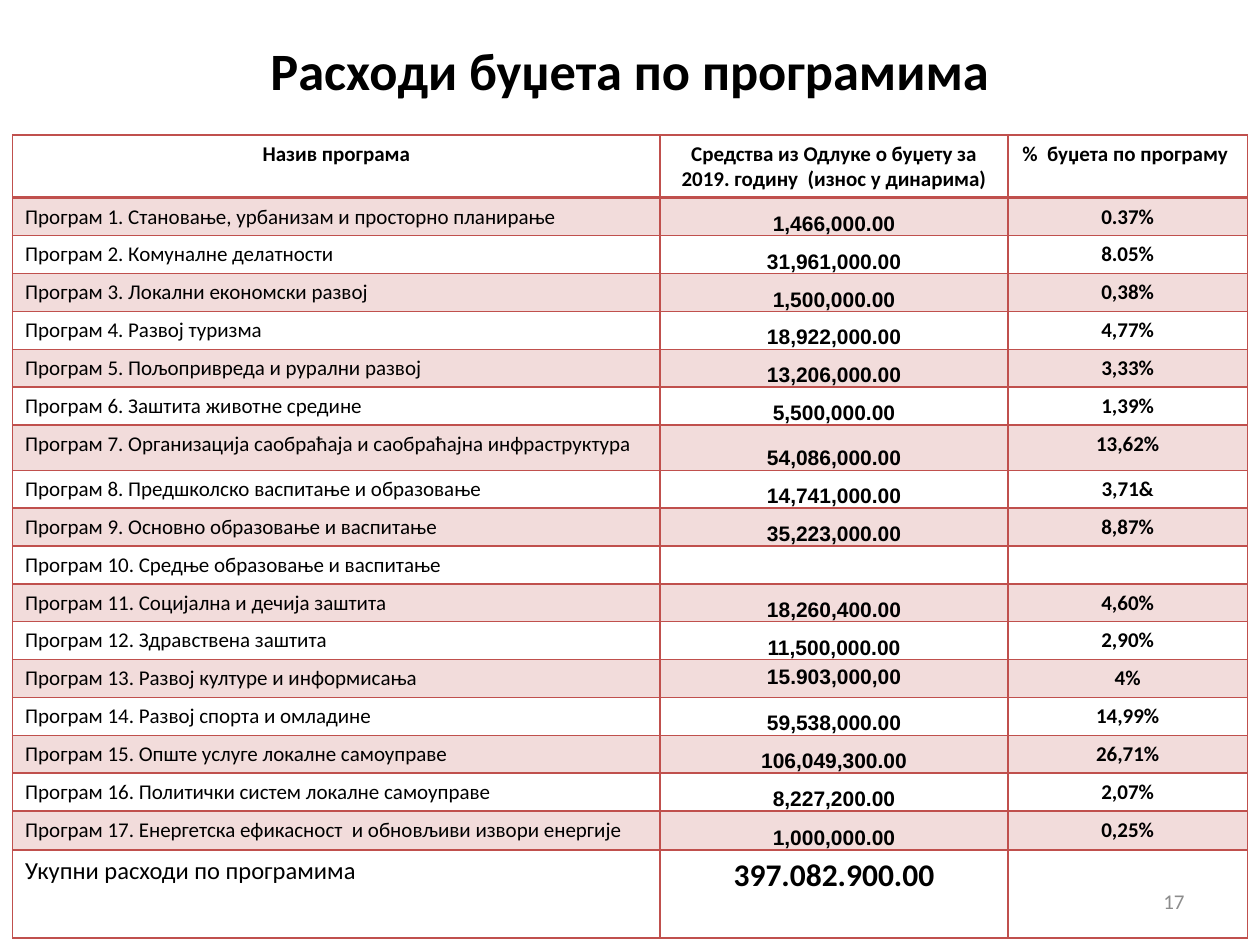
from typing import NamedTuple

from lxml.etree import SubElement
from pptx import Presentation
from pptx.dml.color import RGBColor
from pptx.enum.text import MSO_ANCHOR as Anchor, PP_ALIGN as Align
from pptx.oxml.ns import qn
from pptx.util import Inches, Pt

RED = "C0504D"
BLACK = "000000"
GREY = "8C8C8C"


class Program(NamedTuple):
    name: str
    amount: str
    share: str
    height: float = 0.3


PROGRAMS = [
    Program("Становање, урбанизам и просторно планирање", "1,466,000.00", "0.37%"),
    Program("Комуналне делатности", "31,961,000.00", "8.05%"),
    Program("Локални економски развој", "1,500,000.00", "0,38%"),
    Program("Развој туризма", "18,922,000.00", "4,77%"),
    Program("Пољопривреда и рурални развој", "13,206,000.00", "3,33%"),
    Program("Заштита животне средине", "5,500,000.00", "1,39%"),
    Program("Организација саобраћаја и саобраћајна инфраструктура",
            "54,086,000.00", "13,62%", 0.36),
    Program("Предшколско васпитање и образовање", "14,741,000.00", "3,71&"),
    Program("Основно образовање и васпитање", "35,223,000.00", "8,87%"),
    Program("Средње образовање и васпитање", "", ""),
    Program("Социјална и дечија заштита", "18,260,400.00", "4,60%"),
    Program("Здравствена заштита", "11,500,000.00", "2,90%"),
    Program("Развој културе и информисања", "15.903,000,00", "4%"),
    Program("Развој спорта и омладине", "59,538,000.00", "14,99%"),
    Program("Опште услуге локалне самоуправе", "106,049,300.00", "26,71%"),
    Program("Политички систем локалне самоуправе", "8,227,200.00", "2,07%"),
    Program("Енергетска ефикасност  и обновљиви извори енергије",
            "1,000,000.00", "0,25%", 0.31),
]
HEADINGS = [
    "Назив програма",
    "Средства из Одлуке о буџету за 2019. годину  (износ у динарима)",
    "%  буџета по програму ",
]
COLUMN_WIDTHS = [5.14, 2.76, 1.9]
TOP_ANCHORED = 13


def rgb(value: str) -> RGBColor:
    return RGBColor.from_string(value)


def write(frame, text: str, *, size: float = 12, font: str = "Calibri",
          color: str = BLACK, bold: bool = False, align=Align.CENTER) -> None:
    paragraph = frame.paragraphs[0]
    paragraph.alignment = align
    if not text:
        SubElement(paragraph._p, qn("a:endParaRPr"), sz=str(size * 100))
        return
    run = paragraph.add_run()
    run.text = text
    run.font.size = Pt(size)
    run.font.name = font
    run.font.bold = bold
    run.font.color.rgb = rgb(color)


def add_label(slide, text: str, left: float, top: float, width: float,
              height: float, **style) -> None:
    frame = slide.shapes.add_textbox(
        Inches(left), Inches(top), Inches(width), Inches(height)).text_frame
    frame.word_wrap = True
    frame.vertical_anchor = Anchor.MIDDLE
    write(frame, text, **style)


def decorate(cell, shaded: bool, top: float = 1, bottom: float = 1) -> None:
    properties = cell._tc.get_or_add_tcPr()
    for side, width in {"L": 1, "R": 1, "T": top, "B": bottom}.items():
        border = SubElement(properties, qn(f"a:ln{side}"), w=str(Pt(width)))
        SubElement(SubElement(border, qn("a:solidFill")), qn("a:srgbClr"), val=RED)
    if shaded:
        cell.fill.solid()
        cell.fill.fore_color.rgb = rgb(RED)
        tint = properties.find(qn("a:solidFill")).find(qn("a:srgbClr"))
        SubElement(tint, qn("a:alpha"), val="20000")
    else:
        cell.fill.background()


def anchor_to_bottom(cell) -> None:
    cell.vertical_anchor = Anchor.BOTTOM
    cell.margin_left = cell.margin_right = 0
    cell.margin_top = cell.margin_bottom = 0


def add_budget_table(slide) -> None:
    heights = [0.5, *(program.height for program in PROGRAMS), 0.7]
    budget = slide.shapes.add_table(
        len(heights), len(COLUMN_WIDTHS), Inches(0.1), Inches(1.07),
        Inches(sum(COLUMN_WIDTHS)), Inches(sum(heights))).table
    budget.first_row = budget.horz_banding = False
    for column, width in zip(budget.columns, COLUMN_WIDTHS):
        column.width = Inches(width)
    for number, height in enumerate(heights):
        budget.rows[number].height = Inches(height)
        for cell in budget.rows[number].cells:
            decorate(cell, shaded=number % 2 == 1 and number <= len(PROGRAMS),
                     top=2 if number == 1 else 1,
                     bottom=2 if number == 0 else 1)

    for column, heading in enumerate(HEADINGS):
        write(budget.cell(0, column).text_frame, heading, bold=True)

    for number, program in enumerate(PROGRAMS, start=1):
        name, amount, share = budget.rows[number].cells
        write(name.text_frame, f"Програм {number}. {program.name}", align=Align.LEFT)
        write(amount.text_frame, program.amount, font="Arial", bold=True)
        write(share.text_frame, program.share, bold=True)
        if program.amount and number != TOP_ANCHORED:
            anchor_to_bottom(amount)

    name, amount, share = budget.rows[len(heights) - 1].cells
    write(name.text_frame, "Укупни расходи по програмима", size=14, align=Align.LEFT)
    write(amount.text_frame, "397.082.900.00", size=18, bold=True)
    write(share.text_frame, "")


def main() -> None:
    deck = Presentation()
    deck.slide_width, deck.slide_height = Inches(10), Inches(7.5)
    slide = deck.slides.add_slide(deck.slide_layouts[6])
    add_label(slide, "Расходи буџета по програмима", 0.74, 0.13, 8.52, 0.85,
              size=30, bold=True)
    add_label(slide, "17", 7.17, 6.95, 2.33, 0.4, color=GREY, align=Align.RIGHT)
    add_budget_table(slide)
    deck.save("out.pptx")


if __name__ == "__main__":
    main()
